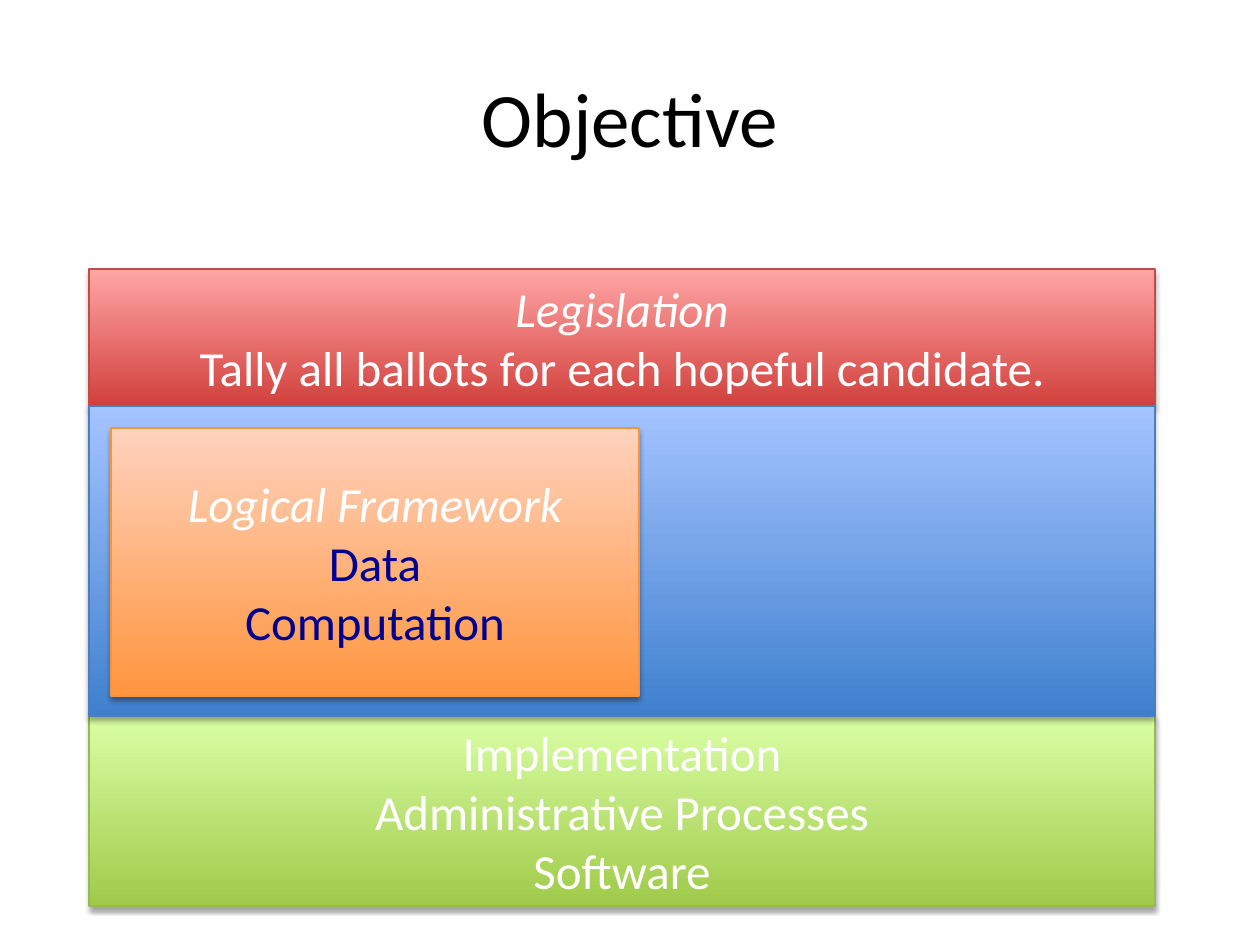
from lxml.etree import SubElement
from pptx import Presentation
from pptx.dml.color import RGBColor
from pptx.enum.shapes import MSO_SHAPE
from pptx.enum.text import MSO_ANCHOR, PP_ALIGN
from pptx.oxml.ns import qn
from pptx.util import Pt

SCALE = 914400 / 126
COLORS = {
    "black": "000000", "white": "FFFFFF", "navy": "000090",
    "green": ("A0CA4A", "DAFFA5", "98B955"),
    "red": ("D1403C", "FFA6A5", "BF4C48"),
    "blue": ("3F80CE", "A4C4FF", "4B7EBC"),
    "orange": ("FF953E", "FFD2BD", "F69240"),
}


def px(*lengths):
    return [round(length * SCALE) for length in lengths]


def write_lines(shape, lines, size):
    text_frame = shape.text_frame
    text_frame.word_wrap = True
    text_frame.vertical_anchor = MSO_ANCHOR.MIDDLE
    text_frame.text = "\n".join(text for text, color, italic in lines)
    for paragraph, (text, color, italic) in zip(text_frame.paragraphs, lines):
        paragraph.alignment = PP_ALIGN.CENTER
        for run in paragraph.runs:
            run.font.name = "Calibri"
            run.font.size = Pt(size)
            run.font.italic = italic
            run.font.color.rgb = RGBColor.from_string(COLORS[color])


presentation = Presentation()
presentation.slide_width, presentation.slide_height = px(1260, 945)
slide = presentation.slides.add_slide(presentation.slide_layouts[6])

title = slide.shapes.add_textbox(*px(63, 38, 1134, 157))
write_lines(title, [("Objective", "black", False)], 44)

LEFT, WIDTH = 89, 1066
blocks = [
    ((LEFT, 716, WIDTH, 190), "green", [
        ("Implementation", "white", False),
        ("Administrative Processes", "white", False),
        ("Software", "white", False),
    ]),
    ((LEFT, 269, WIDTH, 137), "red", [
        ("Legislation", "white", True),
        ("Tally all ballots for each hopeful candidate.", "white", False),
    ]),
    ((LEFT, 406, WIDTH, 310), "blue", []),
    ((111, 428, 528, 268), "orange", [
        ("Logical Framework", "white", True),
        ("Data", "navy", False),
        ("Computation", "navy", False),
    ]),
]

for box, palette, lines in blocks:
    shape = slide.shapes.add_shape(MSO_SHAPE.RECTANGLE, *px(*box))
    bottom, top, outline = COLORS[palette]
    shape.fill.gradient()
    shape.fill.gradient_angle = 90
    for stop, color, position in zip(shape.fill.gradient_stops, (bottom, top), (0, 1)):
        stop.color.rgb = RGBColor.from_string(color)
        stop.position = position
    shape.line.color.rgb = RGBColor.from_string(outline)
    shape.line.width = Pt(0.75)
    effects = SubElement(shape.element.spPr, qn("a:effectLst"))
    shadow = SubElement(effects, qn("a:outerShdw"), blurRad=str(Pt(3.1)),
                        dist=str(Pt(1.8)), dir="5400000", rotWithShape="0")
    shadow_color = SubElement(shadow, qn("a:srgbClr"), val=COLORS["black"])
    SubElement(shadow_color, qn("a:alpha"), val="35000")
    if lines:
        write_lines(shape, lines, 28)

presentation.save("out.pptx")
